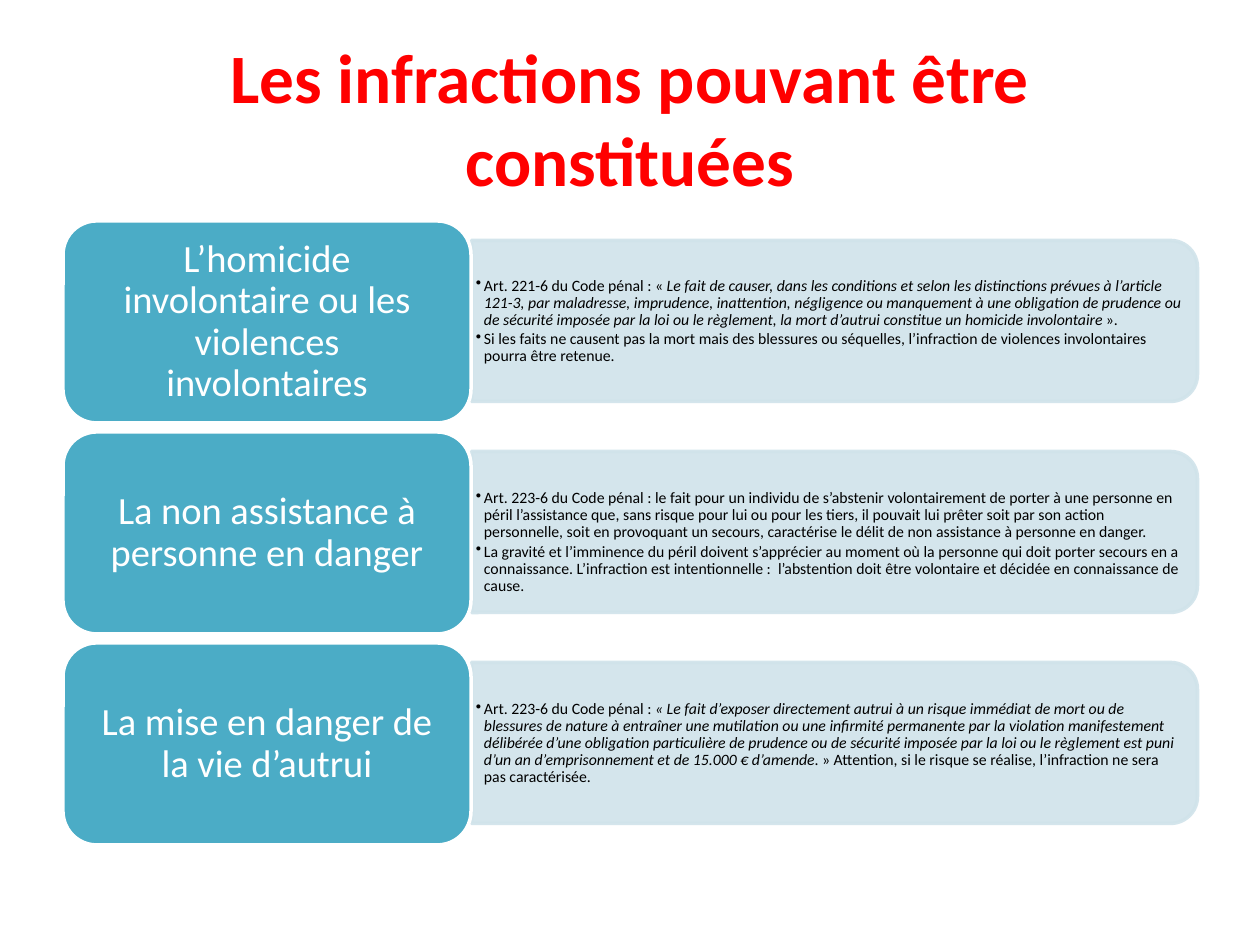
from lxml import etree
from pptx import Presentation
from pptx import util as u
from pptx.dml.color import RGBColor
from pptx.enum import shapes, text
from pptx.oxml import ns

PX = 914400 / 126
RED = RGBColor(0xFF, 0x00, 0x00)
TEAL = RGBColor(0x4B, 0xAC, 0xC6)
PALE = RGBColor(0xD0, 0xE3, 0xEA)
WHITE = RGBColor(0xFF, 0xFF, 0xFF)
BLACK = RGBColor(0x00, 0x00, 0x00)
TOP, PITCH = 221, 211

OFFENCES = [
    ("L’homicide involontaire ou les violences involontaires", 3, [
        [("Art. 221-6 du Code pénal : « ", False),
         ("Le fait de causer, dans les conditions et selon les distinctions prévues à "
          "l’article 121-3, par maladresse, imprudence, inattention, négligence ou "
          "manquement à une obligation de prudence ou de sécurité imposée par la loi ou "
          "le règlement, la mort d’autrui constitue un homicide involontaire", True),
         (" ».", False)],
        [("Si les faits ne causent pas la mort mais des blessures ou séquelles, "
          "l’infraction de violences involontaires pourra être retenue.", False)],
    ]),
    ("La non assistance à personne en danger", 23, [
        [("Art. 223-6 du Code pénal : le fait pour un individu de s’abstenir "
          "volontairement de porter à une personne en péril l’assistance que, sans risque "
          "pour lui ou pour les tiers, il pouvait lui prêter soit par son action "
          "personnelle, soit en provoquant un secours, caractérise le délit de non "
          "assistance à personne en danger.", False)],
        [("La gravité et l’imminence du péril doivent s’apprécier au moment où la personne "
          "qui doit porter secours en a connaissance. L’infraction est intentionnelle :  "
          "l’abstention doit être volontaire et décidée en connaissance de cause.", False)],
    ]),
    ("La mise en danger de la vie d’autrui", 3, [
        [("Art. 223-6 du Code pénal : ", False),
         ("« Le fait d’exposer directement autrui à un risque immédiat de mort ou de "
          "blessures de nature à entraîner une mutilation ou une infirmité permanente par "
          "la violation manifestement délibérée d’une obligation particulière de prudence "
          "ou de sécurité imposée par la loi ou le règlement est puni d’un an "
          "d’emprisonnement et de 15.000 € d’amende", True),
         (". » Attention, si le risque se réalise, l’infraction ne sera pas "
          "caractérisée.", False)],
    ]),
]


def px(*lengths):
    return [u.Emu(round(length * PX)) for length in lengths]


def set_frame(frame, left, top, right, bottom):
    frame.word_wrap = True
    frame.vertical_anchor = text.MSO_ANCHOR.MIDDLE
    frame.margin_left, frame.margin_top, frame.margin_right, frame.margin_bottom = px(
        left, top, right, bottom)


deck = Presentation()
deck.slide_width, deck.slide_height = px(1260, 945)
page = deck.slides.add_slide(deck.slide_layouts[5])

title = page.shapes.title
title.left, title.top, title.width, title.height = px(63, 38, 1134, 158)
title.text_frame.text = "Les infractions pouvant être constituées"
para = title.text_frame.paragraphs[0]
para.font.name = "Calibri"
para.font.size = u.Pt(39.6)
para.font.bold = True
para.font.color.rgb = RED

for row, (name, inset_top, points) in enumerate(OFFENCES):
    top = TOP + row * PITCH

    panel = page.shapes.add_shape(
        shapes.MSO_SHAPE.ROUND_2_SAME_RECTANGLE, *px(754, top - 263, 161, 726))
    panel.rotation = 90
    panel.shadow.inherit = False
    panel.fill.solid()
    panel.fill.fore_color.rgb = PALE
    panel.line.color.rgb = PALE
    panel.line.width = u.Pt(2)
    for color in panel._element.spPr.iter(ns.qn("a:srgbClr")):
        etree.SubElement(color, ns.qn("a:alpha"), val="90000")

    detail = page.shapes.add_textbox(*px(471, top + 28, 718, 145))
    frame = detail.text_frame
    set_frame(frame, 5, inset_top, 5, 3)
    for index, spans in enumerate(points):
        para = frame.add_paragraph() if index else frame.paragraphs[0]
        para.line_spacing = 0.9
        para.space_after = u.Pt(1.35)
        properties = para._p.get_or_add_pPr()
        indent = px(8)[0]
        properties.set("marL", str(indent))
        properties.set("indent", str(-indent))
        etree.SubElement(properties, ns.qn("a:buChar"), char="•")
        para.font.name = "Calibri"
        para.font.size = u.Pt(9)
        para.font.color.rgb = BLACK
        for words, italic in spans:
            span = para.add_run()
            span.text = words
            if italic:
                span.font.italic = True

    label = page.shapes.add_shape(
        shapes.MSO_SHAPE.ROUNDED_RECTANGLE, *px(63, top, 408, 202))
    label.shadow.inherit = False
    label.fill.solid()
    label.fill.fore_color.rgb = TEAL
    label.line.color.rgb = WHITE
    label.line.width = u.Pt(2)
    set_frame(label.text_frame, 21, 16, 21, 16)
    label.text_frame.text = name
    para = label.text_frame.paragraphs[0]
    para.alignment = text.PP_ALIGN.CENTER
    para.line_spacing = 0.9
    para.font.name = "Calibri"
    para.font.size = u.Pt(22)
    para.font.color.rgb = WHITE

deck.save("out.pptx")
